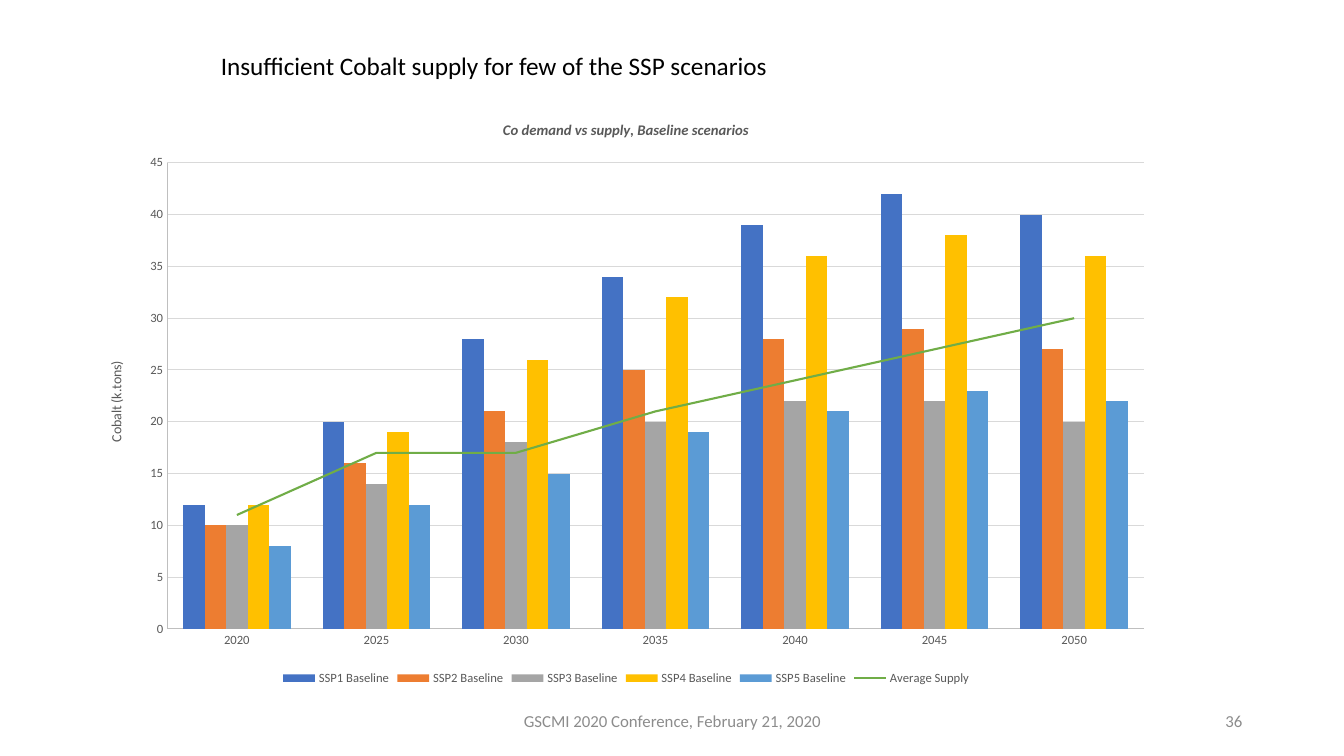
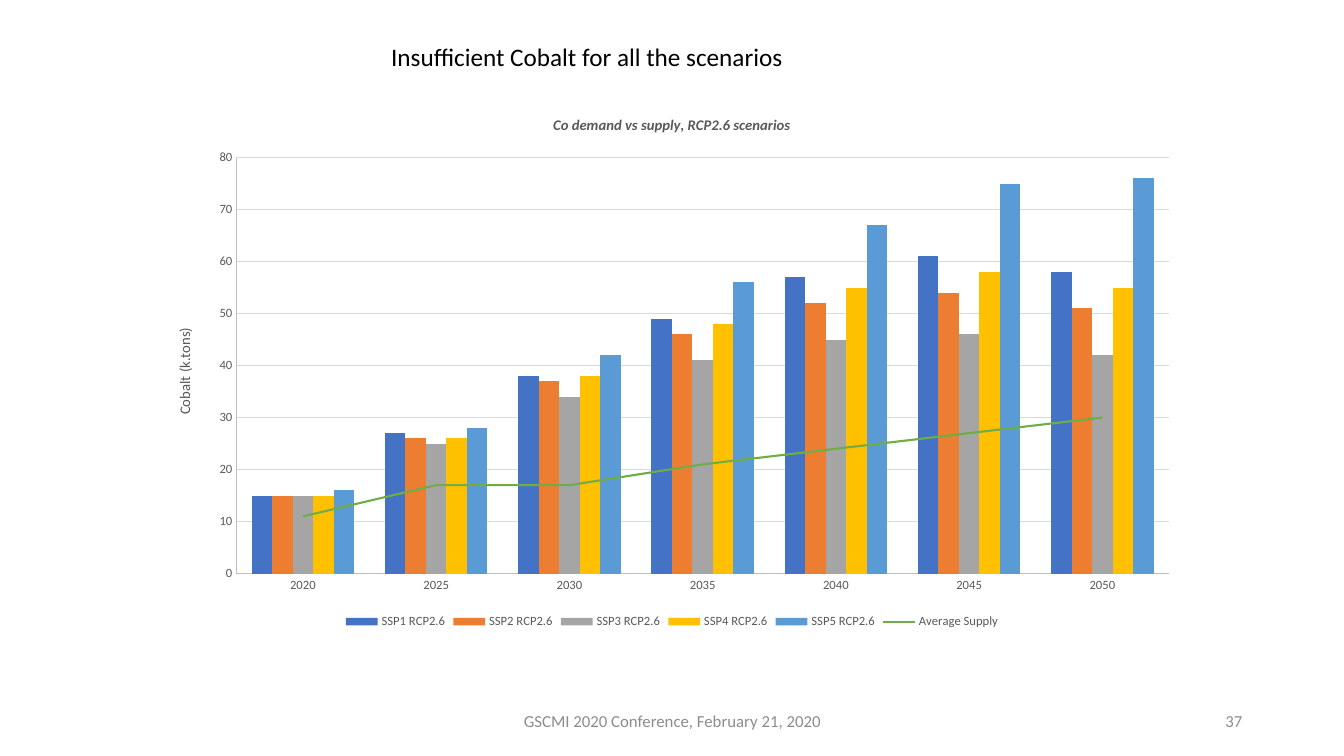
from lxml import etree
from pptx import Presentation
from pptx.chart.data import CategoryChartData
from pptx.dml.color import RGBColor
from pptx.enum.chart import XL_CHART_TYPE, XL_LEGEND_POSITION, XL_MARKER_STYLE, XL_TICK_MARK
from pptx.enum.text import MSO_ANCHOR, MSO_AUTO_SIZE, PP_ALIGN
from pptx.oxml.ns import qn
from pptx.util import Inches, Pt

COLUMNS = XL_CHART_TYPE.COLUMN_CLUSTERED
LEGEND_BOTTOM = XL_LEGEND_POSITION.BOTTOM
NO_MARKER = XL_MARKER_STYLE.NONE
NO_TICK = XL_TICK_MARK.NONE
TOP, MIDDLE = MSO_ANCHOR.TOP, MSO_ANCHOR.MIDDLE
LEFT, CENTER, RIGHT = PP_ALIGN.LEFT, PP_ALIGN.CENTER, PP_ALIGN.RIGHT

FONT = "Calibri"
COLORS = {
    "title": "000000",
    "footer": "8C8C8C",
    "chart text": "595959",
    "axis": "BFBFBF",
    "grid": "D9D9D9",
    "supply": "70AD47",
}
SCENARIO_COLORS = ["4472C4", "ED7D31", "A5A5A5", "FFC000", "5B9BD5"]

FOOTER = "GSCMI 2020 Conference, February 21, 2020"
FOOTER_BOX = (4.42, 6.95, 4.5, 0.4)
NUMBER_BOX = (9.42, 6.95, 3, 0.4)
FIRST_NUMBER = 36

YEARS = ["2020", "2025", "2030", "2035", "2040", "2045", "2050"]
AVERAGE_SUPPLY = [11, 17, 17, 21, 24, 27, 30]

PAGES = [
    {
        "title": "Insufficient Cobalt supply for few of the SSP scenarios",
        "title box": (2.09, 0.45, 5.69, 0.4),
        "chart box": (0.86, 0.99, 10.7, 5.85),
        "scenario": "Baseline",
        "axis title size": 10,
        "demand": [
            [12, 20, 28, 34, 39, 42, 40],
            [10, 16, 21, 25, 28, 29, 27],
            [10, 14, 18, 20, 22, 22, 20],
            [12, 19, 26, 32, 36, 38, 36],
            [8, 12, 15, 19, 21, 23, 22],
        ],
    },
    {
        "title": "Insufficient Cobalt for all the scenarios",
        "title box": (3.78, 0.36, 4.13, 0.4),
        "chart box": (1.53, 0.96, 10.27, 5.32),
        "scenario": "RCP2.6",
        "axis title size": 10.5,
        "demand": [
            [15, 27, 38, 49, 57, 61, 58],
            [15, 26, 37, 46, 52, 54, 51],
            [15, 25, 34, 41, 45, 46, 42],
            [15, 26, 38, 48, 55, 58, 55],
            [16, 28, 42, 56, 67, 75, 76],
        ],
    },
]


def style_font(font, size, color, bold=False, italic=False):
    font.name = FONT
    font.size = Pt(size)
    font.bold = bold
    font.italic = italic
    font.color.rgb = RGBColor.from_string(COLORS[color])


def style_line(line, color, width=0.75):
    line.color.rgb = RGBColor.from_string(color)
    line.width = Pt(width)


def write(frame, text, size, color, align=None, bold=False, italic=False):
    para = frame.paragraphs[0]
    if align is not None:
        para.alignment = align
    span = para.add_run()
    span.text = text
    style_font(span.font, size, color, bold, italic)


def place_title(slide, text, box):
    title = slide.shapes.title
    title.left, title.top, title.width, title.height = map(Inches, box)
    frame = title.text_frame
    frame.word_wrap = False
    frame.auto_size = MSO_AUTO_SIZE.SHAPE_TO_FIT_TEXT
    frame.vertical_anchor = TOP
    write(frame, text, 18, "title", LEFT)


def add_footer(slide, number):
    for text, box, align in ((str(number), NUMBER_BOX, RIGHT), (FOOTER, FOOTER_BOX, CENTER)):
        frame = slide.shapes.add_textbox(*map(Inches, box)).text_frame
        frame.word_wrap = True
        frame.vertical_anchor = MIDDLE
        write(frame, text, 12, "footer", align)


def move_last_series_to_line(chart):
    """Turn the last column series into a line on the same axes."""
    bars = chart.plots[0]
    bar_xml = bars.series[0]._element.getparent()
    series_xml = bars.series[-1]._element
    line_xml = etree.Element(qn("c:lineChart"))
    bar_xml.addnext(line_xml)
    etree.SubElement(line_xml, qn("c:grouping")).set("val", "standard")
    etree.SubElement(line_xml, qn("c:varyColors")).set("val", "0")
    for flag in series_xml.findall(qn("c:invertIfNegative")):
        series_xml.remove(flag)
    line_xml.append(series_xml)
    etree.SubElement(line_xml, qn("c:marker")).set("val", "1")
    for axis_id in bar_xml.findall(qn("c:axId")):
        etree.SubElement(line_xml, qn("c:axId")).set("val", axis_id.get("val"))


def style_axes(chart, title_size):
    for axis in (chart.category_axis, chart.value_axis):
        axis.major_tick_mark = axis.minor_tick_mark = NO_TICK
        style_font(axis.tick_labels.font, 9, "chart text")
        style_line(axis.format.line, COLORS["axis"])
    values = chart.value_axis
    values.tick_labels.number_format = "0"
    values.tick_labels.number_format_is_linked = False
    values.has_major_gridlines = True
    style_line(values.major_gridlines.format.line, COLORS["grid"])
    frame = values.axis_title.text_frame
    write(frame, "Cobalt (k.tons)", title_size, "chart text")
    body = frame._txBody.find(qn("a:bodyPr"))
    body.set("rot", "-5400000")
    body.set("vert", "horz")


def add_demand_chart(slide, page):
    data = CategoryChartData(number_format="0")
    data.categories = YEARS
    for index, values in enumerate(page["demand"], 1):
        data.add_series(f"SSP{index} {page['scenario']}", values)
    data.add_series("Average Supply", AVERAGE_SUPPLY)
    chart = slide.shapes.add_chart(COLUMNS, *map(Inches, page["chart box"]), data).chart
    style_font(chart.font, 10, "title")

    # Title and legend
    chart.has_title = True
    chart.chart_title.include_in_layout = False
    write(chart.chart_title.text_frame, f"Co demand vs supply, {page['scenario']} scenarios",
          10.5, "chart text", bold=True, italic=True)
    chart.has_legend = True
    chart.legend.position = LEGEND_BOTTOM
    chart.legend.include_in_layout = False
    style_font(chart.legend.font, 9, "chart text")

    # Demand columns and supply line
    move_last_series_to_line(chart)
    columns, supply_plot = chart.plots
    columns.gap_width = 150
    columns.overlap = 0
    columns.vary_by_categories = False
    for series, color in zip(columns.series, SCENARIO_COLORS):
        series.format.fill.solid()
        series.format.fill.fore_color.rgb = RGBColor.from_string(color)
    supply = supply_plot.series[0]
    supply.smooth = False
    supply.marker.style = NO_MARKER
    style_line(supply.format.line, COLORS["supply"], 1.5)

    style_axes(chart, page["axis title size"])


def build_page(deck, page, number):
    slide = deck.slides.add_slide(deck.slide_layouts.get_by_name("Title Only"))
    add_demand_chart(slide, page)
    place_title(slide, page["title"], page["title box"])
    add_footer(slide, number)


def main():
    deck = Presentation()
    deck.slide_width, deck.slide_height = Inches(13.33), Inches(7.5)
    for number, page in enumerate(PAGES, FIRST_NUMBER):
        build_page(deck, page, number)
    deck.save("out.pptx")


if __name__ == "__main__":
    main()
